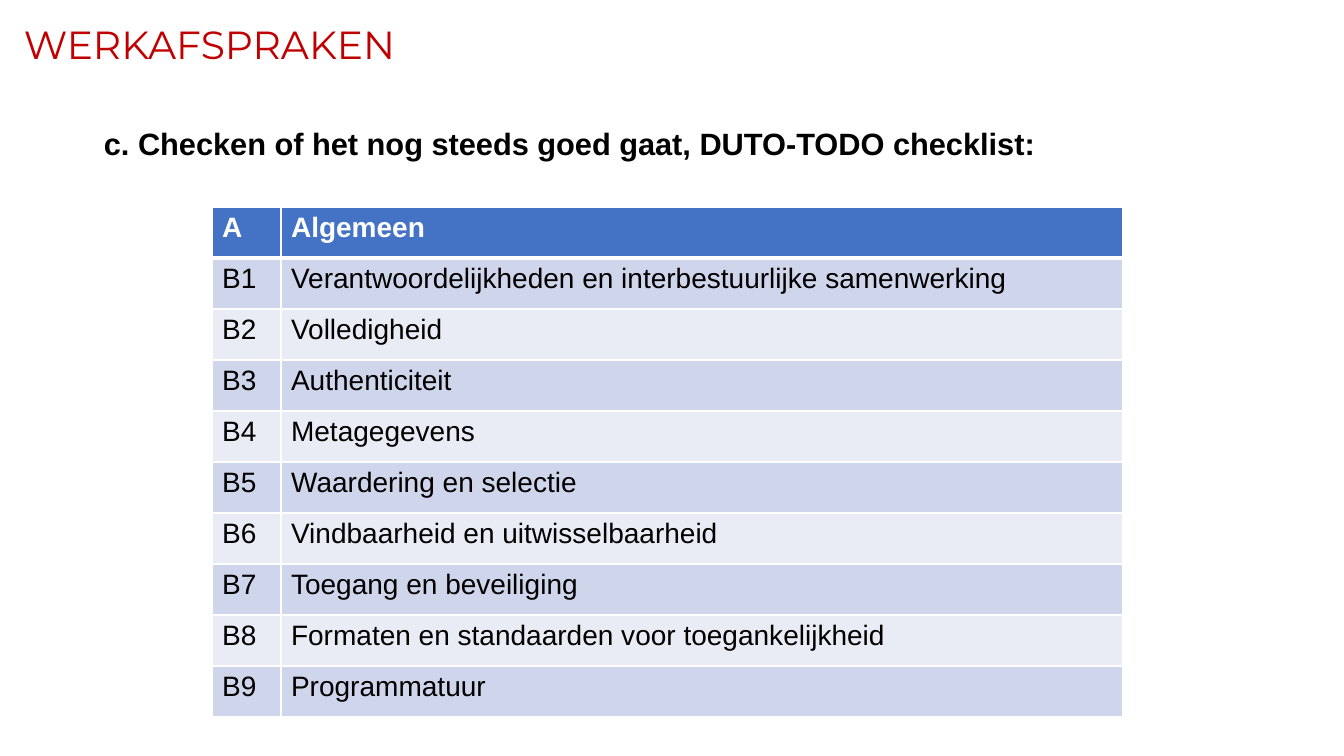
from dataclasses import dataclass

from lxml.etree import SubElement
from pptx import Presentation
from pptx.dml.color import RGBColor
from pptx.enum.text import MSO_ANCHOR
from pptx.oxml.ns import qn
from pptx.util import Pt


@dataclass(frozen=True)
class Theme:
    """Colours, fonts and type sizes of the slide."""
    red: str = "C00000"
    black: str = "000000"
    white: str = "FFFFFF"
    blue: str = "4472C4"
    bands: tuple = ("CFD5EA", "E9EBF5")
    body: str = "Arial"
    head: str = "Montserrat"
    title: int = 28
    lead: int = 22
    cell: int = 20


class Deck:
    """Draws styled elements on one slide, measured in px."""
    scale = 914400 / 100.8

    def __init__(self, theme, width, height):
        self.theme = theme
        self.deck = Presentation()
        self.deck.slide_width = self.emu(width)
        self.deck.slide_height = self.emu(height)
        self.slide = self.deck.slides.add_slide(self.deck.slide_layouts[6])

    def emu(self, px):
        return round(px * self.scale)

    def label(self, frame, text, color, font, para=None):
        line = frame.paragraphs[0]
        run = line.add_run()
        run.text = text
        run.font.color.rgb = RGBColor.from_string(color)
        for target, values in ((run.font, font), (line, para or {})):
            for key, value in values.items():
                setattr(target, key, value)

    def text(self, box, text, color, font, para, anchor=MSO_ANCHOR.TOP):
        shape = self.slide.shapes.add_textbox(*map(self.emu, box))
        frame = shape.text_frame
        frame.word_wrap = True
        frame.vertical_anchor = anchor
        self.label(frame, text, color, font, para)

    def border(self, cell, widths):
        props = cell._tc.get_or_add_tcPr()
        for side, width in zip("LRTB", widths):
            line = SubElement(props, qn(f"a:ln{side}"), w=str(Pt(width)))
            fill = SubElement(line, qn("a:solidFill"))
            SubElement(fill, qn("a:srgbClr"), val=self.theme.white)

    def table(self, left, top, widths, height, rows):
        theme = self.theme
        box = (left, top, sum(widths), height * len(rows))
        table = self.slide.shapes.add_table(
            len(rows), len(widths), *map(self.emu, box)).table
        table.horz_banding = False
        for column, width in zip(table.columns, widths):
            column.width = self.emu(width)
        for index, values in enumerate(rows):
            first = index == 0
            table.rows[index].height = self.emu(height)
            fill = theme.blue if first else theme.bands[(index - 1) % 2]
            color = theme.white if first else theme.black
            font = {"size": Pt(theme.cell), "name": theme.body, "bold": first}
            edges = (1, 1, 3 if index == 1 else 1, 3 if first else 1)
            for cell, value in zip(table.rows[index].cells, values):
                self.border(cell, edges)
                cell.fill.solid()
                cell.fill.fore_color.rgb = RGBColor.from_string(fill)
                self.label(cell.text_frame, value, color, font)


def main():
    theme = Theme()
    page = Deck(theme, 1344, 756)
    topics = (
        "Verantwoordelijkheden en interbestuurlijke samenwerking",
        "Volledigheid",
        "Authenticiteit",
        "Metagegevens",
        "Waardering en selectie",
        "Vindbaarheid en uitwisselbaarheid",
        "Toegang en beveiliging",
        "Formaten en standaarden voor toegankelijkheid",
        "Programmatuur",
    )
    rows = [("A", "Algemeen")]
    rows += [(f"B{number}", topic) for number, topic in enumerate(topics, 1)]
    page.table(212, 207, (69, 842), 51, rows)
    page.text((94, 124, 1085, 481),
              "c. Checken of het nog steeds goed gaat, DUTO-TODO checklist:",
              theme.black,
              {"size": Pt(theme.lead), "name": theme.body, "bold": True},
              {"line_spacing": 0.9, "space_before": Pt(24)})
    page.text((14, 13, 1305, 60), "WERKAFSPRAKEN", theme.red,
              {"size": Pt(theme.title), "name": theme.head},
              {"line_spacing": 0.9}, MSO_ANCHOR.BOTTOM)
    page.deck.save("out.pptx")


if __name__ == "__main__":
    main()
